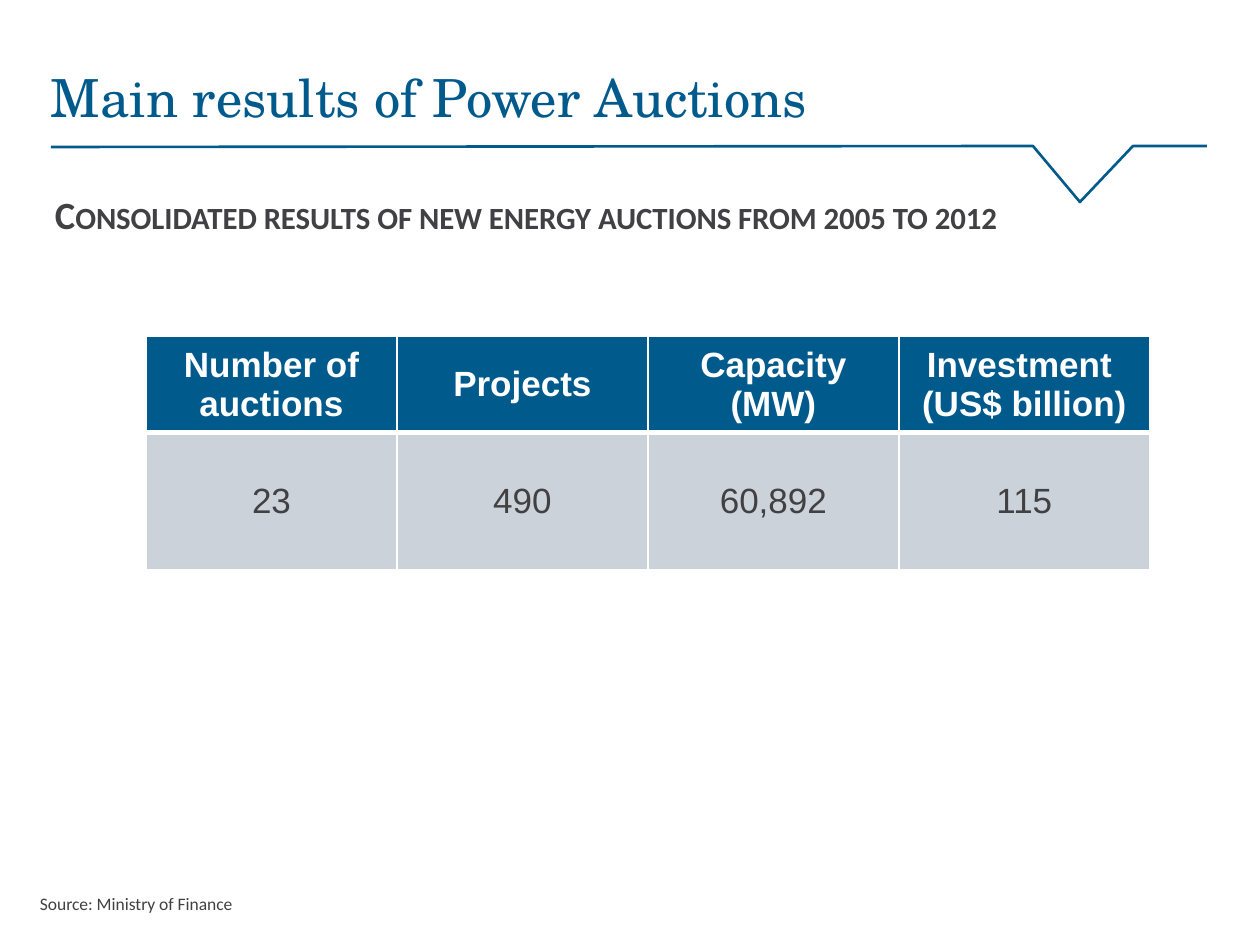
from pptx import Presentation
from pptx.dml.color import RGBColor
from pptx.enum.text import MSO_ANCHOR, PP_ALIGN
from pptx.oxml import parse_xml
from pptx.oxml.ns import nsdecls
from pptx.util import Emu, Pt

SCALE = 914400 / 126
BLUE = RGBColor(0x00, 0x5A, 0x8C)
GREY = RGBColor(0x41, 0x40, 0x42)
PALE = RGBColor(0xCC, 0xD2, 0xDA)
WHITE = RGBColor(0xFF, 0xFF, 0xFF)


def px(length):
    return Emu(round(length * SCALE))


def write(frame, lines, align, **font_format):
    """Fill a text frame with one paragraph per line, all in one font format."""
    frame.word_wrap = True
    for index, line in enumerate(lines):
        para = frame.add_paragraph() if index else frame.paragraphs[0]
        para.alignment = align
        span = para.add_run()
        span.text = line
        for name, value in font_format.items():
            if name == "color":
                span.font.color.rgb = value
            else:
                setattr(span.font, name, value)


deck = Presentation()
deck.slide_width, deck.slide_height = px(1260), px(945)
page = deck.slides.add_slide(deck.slide_layouts[6])

# Title rule with its notch
builder = page.shapes.build_freeform(1207, 146, scale=SCALE)
builder.add_line_segments([(1133, 146), (1080, 202), (1033, 146), (51, 147)], close=False)
rule = builder.convert_to_shape()
rule.shadow.inherit = False
rule.fill.solid()
rule.fill.fore_color.rgb = WHITE
rule.line.color.rgb = BLUE
rule.line.width = Pt(1.5)

# Title, subtitle and source
texts = [
    ((51, 65, 1101, 75), "Main results of Power Auctions",
     {"name": "TeX Gyre Schola", "size": Pt(30), "color": BLUE}),
    ((55, 191, 1132, 78), "Consolidated results of new energy auctions from 2005 to 2012",
     {"name": "Calibri", "size": Pt(22), "bold": True, "color": GREY}),
    ((40, 893, 793, 22), "Source: Ministry of Finance",
     {"name": "Calibri", "size": Pt(10), "color": GREY}),
]
boxes = []
for place, text, font_format in texts:
    box = page.shapes.add_textbox(*map(px, place))
    frame = box.text_frame
    frame.margin_left = frame.margin_right = frame.margin_top = frame.margin_bottom = 0
    write(frame, [text], PP_ALIGN.LEFT, **font_format)
    boxes.append(box)
subtitle_span = boxes[1].text_frame.paragraphs[0].runs[0]
subtitle_span.font._element.set("cap", "small")

# Results table
columns = [
    (["Number of auctions"], "23"),
    (["Projects"], "490"),
    (["Capacity", "(MW)"], "60,892"),
    (["Investment ", "(US$ billion)"], "115"),
]
row_formats = [
    {"height": 90, "fill": BLUE, "color": WHITE, "bold": True, "thick": "lnB"},
    {"height": 137, "fill": PALE, "color": GREY, "bold": False, "thick": "lnT"},
]
table = page.shapes.add_table(2, len(columns), px(146), px(336), px(1004), px(227)).table
for column in table.columns:
    column.width = px(251)
for row_index, row_format in enumerate(row_formats):
    table.rows[row_index].height = px(row_format["height"])
    for column_index, (heading, value) in enumerate(columns):
        cell = table.cell(row_index, column_index)
        cell.vertical_anchor = MSO_ANCHOR.MIDDLE
        lines = [value] if row_index else heading
        write(cell.text_frame, lines, PP_ALIGN.CENTER, name="Arial", size=Pt(20),
              bold=row_format["bold"], color=row_format["color"])
        properties = cell._tc.get_or_add_tcPr()
        for side in ("lnL", "lnR", "lnT", "lnB"):
            width = Pt(3 if side == row_format["thick"] else 1)
            properties.append(parse_xml(
                f'<a:{side} {nsdecls("a")} w="{width}"><a:solidFill>'
                f'<a:srgbClr val="{WHITE}"/></a:solidFill></a:{side}>'))
        cell.fill.solid()
        cell.fill.fore_color.rgb = row_format["fill"]

deck.save("out.pptx")
